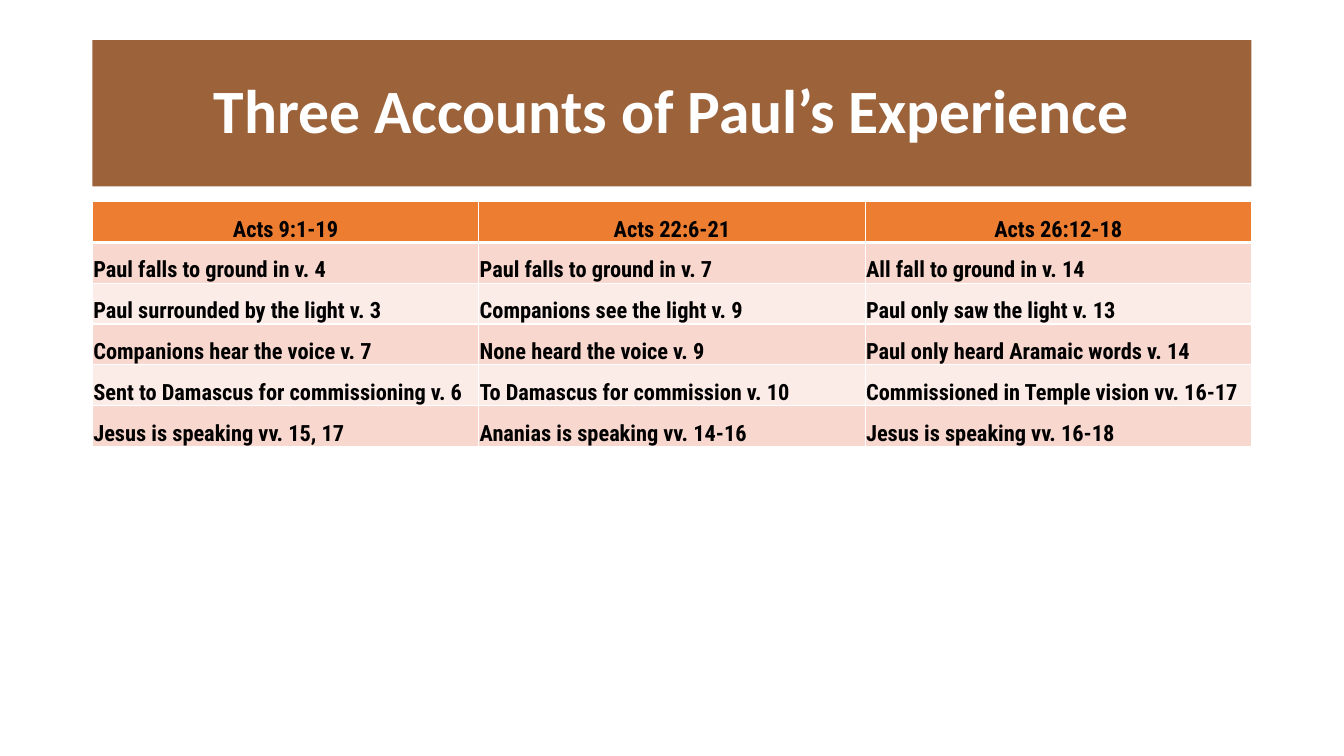
from pptx import Presentation
from pptx.dml.color import RGBColor
from pptx.enum.shapes import MSO_SHAPE
from pptx.enum.text import MSO_ANCHOR as Anchor, PP_ALIGN as Align
from pptx.oxml.ns import qn
from pptx.util import Pt
from lxml.etree import SubElement

COLORS = {
    "banner": "843C0B",
    "white": "FFFFFF",
    "black": "000000",
    "header": "ED7D31",
    "odd_row": "F8D7CE",
    "even_row": "FCECE8",
}
LEFT, WIDTH = 66, 828
ROW_HEIGHT = 29.16
ACCOUNTS = [
    ("Acts 9:1-19", "Acts 22:6-21", "Acts 26:12-18"),
    ("Paul falls to ground in v. 4", "Paul falls to ground in v. 7",
     "All fall to ground in v. 14"),
    ("Paul surrounded by the light v. 3", "Companions see the light v. 9",
     "Paul only saw the light v. 13"),
    ("Companions hear the voice v. 7", "None heard the voice v. 9",
     "Paul only heard Aramaic words v. 14"),
    ("Sent to Damascus for commissioning v. 6", "To Damascus for commission v. 10",
     "Commissioned in Temple vision vv. 16-17"),
    ("Jesus is speaking vv. 15, 17", "Ananias is speaking vv. 14-16",
     "Jesus is speaking vv. 16-18"),
]


def color(name):
    return RGBColor.from_string(COLORS[name])


def write(frame, text, font, size, ink, align):
    para = frame.paragraphs[0]
    para.alignment = align
    span = para.add_run()
    span.text = text
    span.font.name = font
    span.font.size = Pt(size)
    span.font.bold = True
    span.font.color.rgb = color(ink)
    return para


def add_banner(page, text):
    box = page.shapes.add_shape(MSO_SHAPE.RECTANGLE, Pt(LEFT), Pt(28.75), Pt(WIDTH), Pt(104.4))
    box.shadow.inherit = False
    box.line.fill.background()
    box.fill.solid()
    box.fill.fore_color.rgb = color("banner")
    # Let the fill show at 80 % opacity
    tint = box.fill._xPr.find(qn("a:solidFill")).find(qn("a:srgbClr"))
    SubElement(tint, qn("a:alpha"), val="80000")
    frame = box.text_frame
    frame.word_wrap = True
    frame.vertical_anchor = Anchor.MIDDLE
    para = write(frame, text, "Calibri", 44, "white", Align.CENTER)
    para.line_spacing = 0.9


def add_borders(cell, bottom_width):
    properties = cell._tc.get_or_add_tcPr()
    for side, width in (("L", 1), ("R", 1), ("T", 1), ("B", bottom_width)):
        line = SubElement(properties, qn(f"a:ln{side}"), w=str(Pt(width)))
        fill = SubElement(line, qn("a:solidFill"))
        SubElement(fill, qn("a:srgbClr"), val=COLORS["white"])


def fill_cell(cell, text, background, align, bottom_width):
    add_borders(cell, bottom_width)
    cell.fill.solid()
    cell.fill.fore_color.rgb = color(background)
    cell.margin_left = cell.margin_right = cell.margin_top = Pt(0.7)
    cell.margin_bottom = Pt(0)
    cell.vertical_anchor = Anchor.BOTTOM
    write(cell.text_frame, text, "Roboto Condensed", 16, "black", align)


def add_accounts(page, rows):
    columns = len(rows[0])
    table = page.shapes.add_table(len(rows), columns, Pt(LEFT), Pt(144), Pt(WIDTH),
                                  Pt(ROW_HEIGHT * len(rows))).table
    for column in table.columns:
        column.width = Pt(WIDTH / columns)
    for index, texts in enumerate(rows):
        table.rows[index].height = Pt(ROW_HEIGHT)
        if index == 0:
            style = ("header", Align.CENTER, 3)
        else:
            style = ("odd_row" if index % 2 else "even_row", Align.LEFT, 1)
        for position, text in enumerate(texts):
            fill_cell(table.cell(index, position), text, *style)


def main():
    deck = Presentation()
    deck.slide_width, deck.slide_height = Pt(960), Pt(540)
    page = deck.slides.add_slide(deck.slide_layouts[6])
    # Title banner
    add_banner(page, "Three Accounts of Paul’s Experience")
    # Comparison of the three accounts
    add_accounts(page, ACCOUNTS)
    deck.save("out.pptx")


if __name__ == "__main__":
    main()
